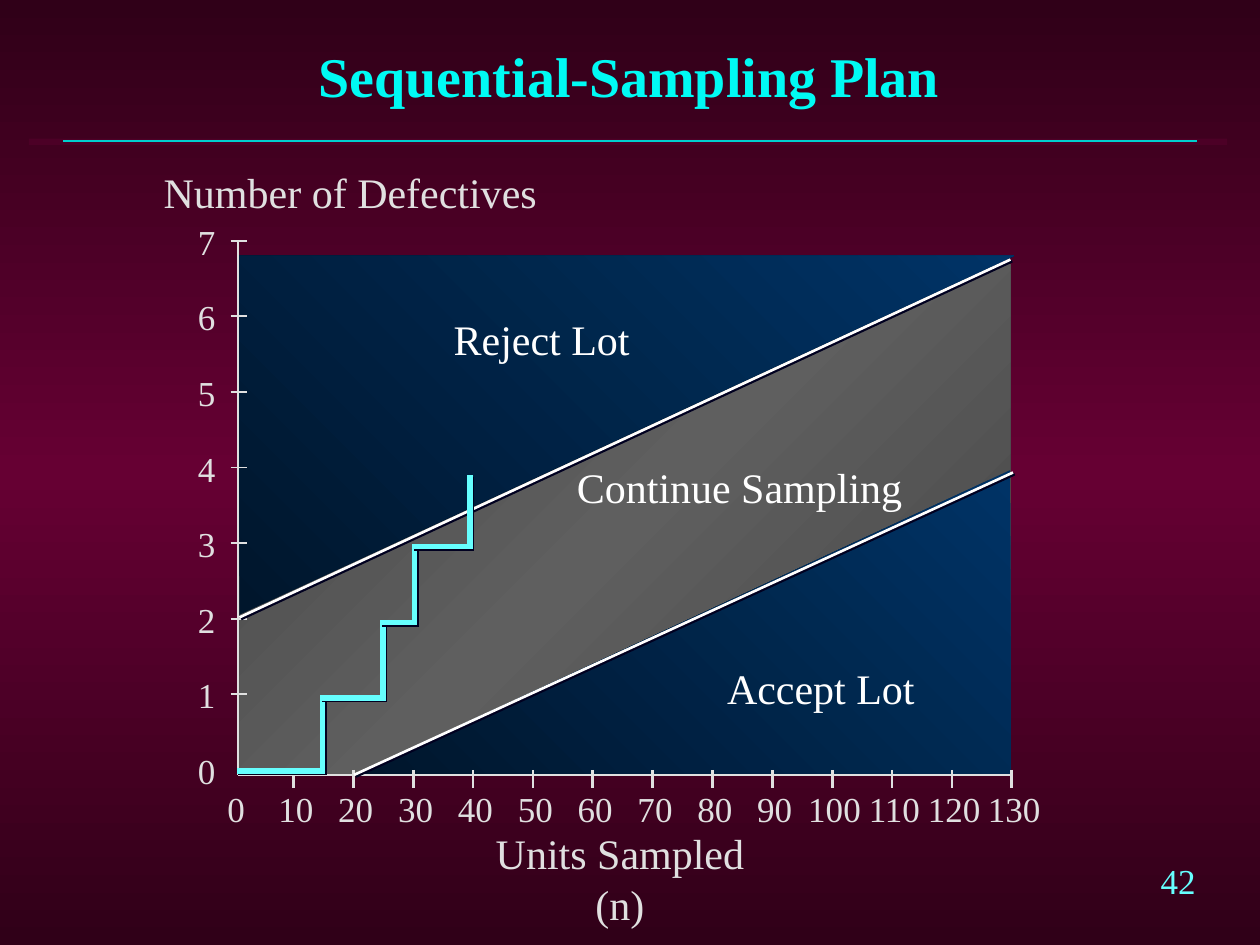
"""Build the sequential sampling plan slide."""
import pptx
import pptx.dml.color
import pptx.enum.shapes
import pptx.enum.text
import pptx.oxml
import pptx.util

Inches = pptx.util.Inches
Pt = pptx.util.Pt
SHAPE = pptx.enum.shapes.MSO_SHAPE
ALIGN = pptx.enum.text.PP_ALIGN
ANCHOR = pptx.enum.text.MSO_ANCHOR
NS = 'xmlns:a="http://schemas.openxmlformats.org/drawingml/2006/main"'

THEME = {
    "face": "Times New Roman",
    "back": [(0, "300018"), (50, "660033"), (100, "300018")],
    "band": [(0, "444444"), (50, "5F5F5F"), (100, "444444")],
    "accept": [(0, "003366"), (100, "00162C")],
    "reject": [(0, "00162C"), (100, "003366")],
    "bar": "4C0026",
    "rule": "00CECE",
    "axis": "E0E0E0",
    "bound": "FFFFFF",
    "path": "66FFFF",
    "shade": "000020",
    "title": ("00FAF4", {"size": Pt(32), "bold": True}),
    "tick": ("E0E0E0", {"size": Pt(20), "bold": False}),
    "name": ("E0E0E0", {"size": Pt(24), "bold": False}),
    "zone": ("FFFFFF", {"size": Pt(24), "bold": False}),
    "page": ("66FFFF", {"size": Pt(20), "bold": False}),
}

TITLE = "Sequential-Sampling Plan"
LABELS = [
    ("Number of Defectives", (1.2, 1.27, 3.16, 0.5), "name"),
    ("Units Sampled (n)", (3.6, 6.52, 2.64, 0.5), "name"),
    ("Reject Lot", (3.5, 2.44, 1.6, 0.5), "zone"),
    ("Accept Lot", (5.67, 5.21, 1.69, 0.5), "zone"),
    ("Continue Sampling", (4.48, 3.61, 2.78, 0.5), "zone"),
    ("42", (9.09, 6.77, 0.52, 0.43), "page"),
]
ZONES = [
    (SHAPE.RECTANGLE, (1.9, 2.1, 6.12, 4.04), "band", None),
    (SHAPE.RIGHT_TRIANGLE, (2.81, 3.73, 5.21, 2.42), "accept", "flipH"),
    (SHAPE.RIGHT_TRIANGLE, (1.9, 2.03, 6.15, 2.85), "reject", "flipV"),
]
BOUNDS = [((2.81, 6.15), (8.04, 3.75)), ((1.9, 4.9), (8.02, 2.06))]
STEPS = [(1.9, 6.12), (2.56, 6.12), (2.56, 5.54), (3.04, 5.54), (3.04, 4.94),
         (3.29, 4.94), (3.29, 4.34), (3.73, 4.34), (3.73, 3.79)]
UNITS = range(0, 140, 10)
COUNTS = range(8)
LEFT, BASE, TOP, RIGHT = 1.89, 6.15, 1.91, 8.03
X_GAP, Y_GAP = 0.475, 0.6


def paint(text):
    return pptx.dml.color.RGBColor.from_string(text)


def blend(host, fill, stops, angle):
    fill.gradient()
    grad = host.xpath(".//a:gradFill")[0]
    for child in list(grad):
        grad.remove(child)
    marks = "".join(f'<a:gs pos="{pos * 1000}"><a:srgbClr val="{tint}"/></a:gs>'
                    for pos, tint in stops)
    grad.append(pptx.oxml.parse_xml(f"<a:gsLst {NS}>{marks}</a:gsLst>"))
    grad.append(pptx.oxml.parse_xml(
        f'<a:lin {NS} ang="{angle * 60000}" scaled="0"/>'))


def effect(reach):
    shade = (f'<a:outerShdw dist="{Pt(reach)}" dir="2700000" algn="ctr" '
             f'rotWithShape="0"><a:srgbClr val="{THEME["shade"]}"/></a:outerShdw>')
    return pptx.oxml.parse_xml(
        f'<a:effectLst {NS}>{shade if reach else ""}</a:effectLst>')


def draw(shapes, start, end, tint, width, reach=0):
    line = shapes.add_connector(pptx.enum.shapes.MSO_CONNECTOR.STRAIGHT,
                                *map(Inches, start + end))
    line.line.color.rgb = paint(tint)
    line.line.width = Pt(width)
    line.element.spPr.append(effect(reach))
    return line


def form(shapes, kind, box):
    shape = shapes.add_shape(kind, *map(Inches, box))
    shape.shadow.inherit = False
    shape.line.fill.background()
    return shape


def write(shape, text, style, align=ALIGN.CENTER, wrap=False):
    frame = shape.text_frame
    frame.word_wrap = wrap
    para = frame.paragraphs[0]
    para.alignment = align
    run = para.add_run()
    run.text = text
    tint, values = THEME[style]
    run.font.color.rgb = paint(tint)
    for key, value in {"name": THEME["face"], **values}.items():
        setattr(run.font, key, value)
    return para, run


def label(shapes, text, box, style, **kind):
    return write(shapes.add_textbox(*map(Inches, box)), text, style, **kind)


def head(slide):
    bar = form(slide.shapes, SHAPE.RECTANGLE, (0.23, 1.1, 9.51, 0.05))
    bar.fill.solid()
    bar.fill.fore_color.rgb = paint(THEME["bar"])
    draw(slide.shapes, (0.5, 1.12), (9.5, 1.12), THEME["rule"], 1)
    title = slide.shapes.title
    box = dict(zip(("left", "top", "width", "height"), (0.33, 0.08, 9.33, 1.04)))
    for key, value in box.items():
        setattr(title, key, Inches(value))
    title.text_frame.vertical_anchor = ANCHOR.MIDDLE
    run = write(title, TITLE, "title", wrap=True)[1]
    run.font.color.rgb = paint(THEME["title"][0])
    run.font.fill.solid()
    run.font.fill.fore_color.rgb = paint(THEME["title"][0])
    run.font._element.xpath("./a:solidFill")[0].addnext(effect(2.8))


def axes(shapes):
    tint = THEME["axis"]
    draw(shapes, (LEFT, BASE), (RIGHT, BASE), tint, 1)
    draw(shapes, (LEFT, TOP), (LEFT, BASE), tint, 1)
    for count in COUNTS:
        y = TOP + (COUNTS[-1] - count) * Y_GAP
        if count:
            draw(shapes, (1.83, y), (1.96, y), tint, 1)
        label(shapes, str(count), (1.47, y - 0.21, 0.34, 0.43), "tick")
    spots = [RIGHT - X_GAP * (len(UNITS) - 1 - i) for i in range(len(UNITS))]
    for x in spots[1:]:
        draw(shapes, (x, 6.11), (x, 6.25), tint, 1.5)
    row = (1.68, 6.2, 6.81, 0.43)
    para = label(shapes, "".join(f"\t{unit}" for unit in UNITS), row, "tick",
                 align=ALIGN.LEFT, wrap=True)[0]
    stops = "".join(f'<a:tab pos="{Inches(x + 0.02 - row[0] - 0.1)}" algn="ctr"/>'
                    for x in spots)
    para._p.get_or_add_pPr().append(
        pptx.oxml.parse_xml(f"<a:tabLst {NS}>{stops}</a:tabLst>"))


def main():
    deck = pptx.Presentation()
    deck.slide_width, deck.slide_height = Inches(10), Inches(7.5)
    slide = deck.slides.add_slide(deck.slide_layouts[5])
    shapes = slide.shapes
    blend(slide.element, slide.background.fill, THEME["back"], 90)
    head(slide)
    for kind, box, fill, flip in ZONES:
        zone = form(shapes, kind, box)
        blend(zone.element, zone.fill, THEME[fill], 45)
        if flip:
            zone.element.spPr.xfrm.set(flip, "1")
    axes(shapes)
    for start, end in BOUNDS:
        draw(shapes, start, end, THEME["bound"], 1.5, 1.4)
    for text, box, style in LABELS:
        label(shapes, text, box, style)
    group = shapes.add_group_shape()
    for start, end in zip(STEPS, STEPS[1:]):
        step = draw(group.shapes, start, end, THEME["path"], 3, 1.4)
        step.element.spPr.xpath("./a:ln")[0].set("cap", "sq")
    deck.save("out.pptx")


if __name__ == "__main__":
    main()
